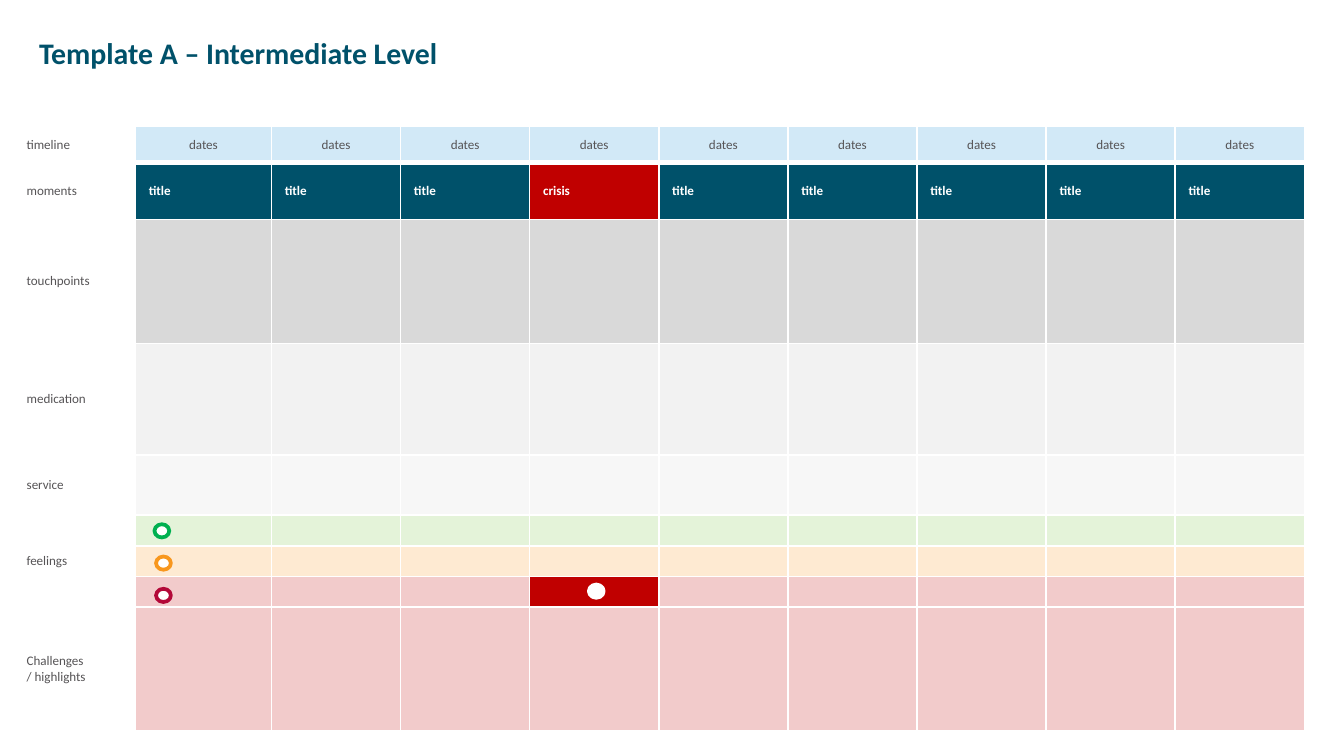
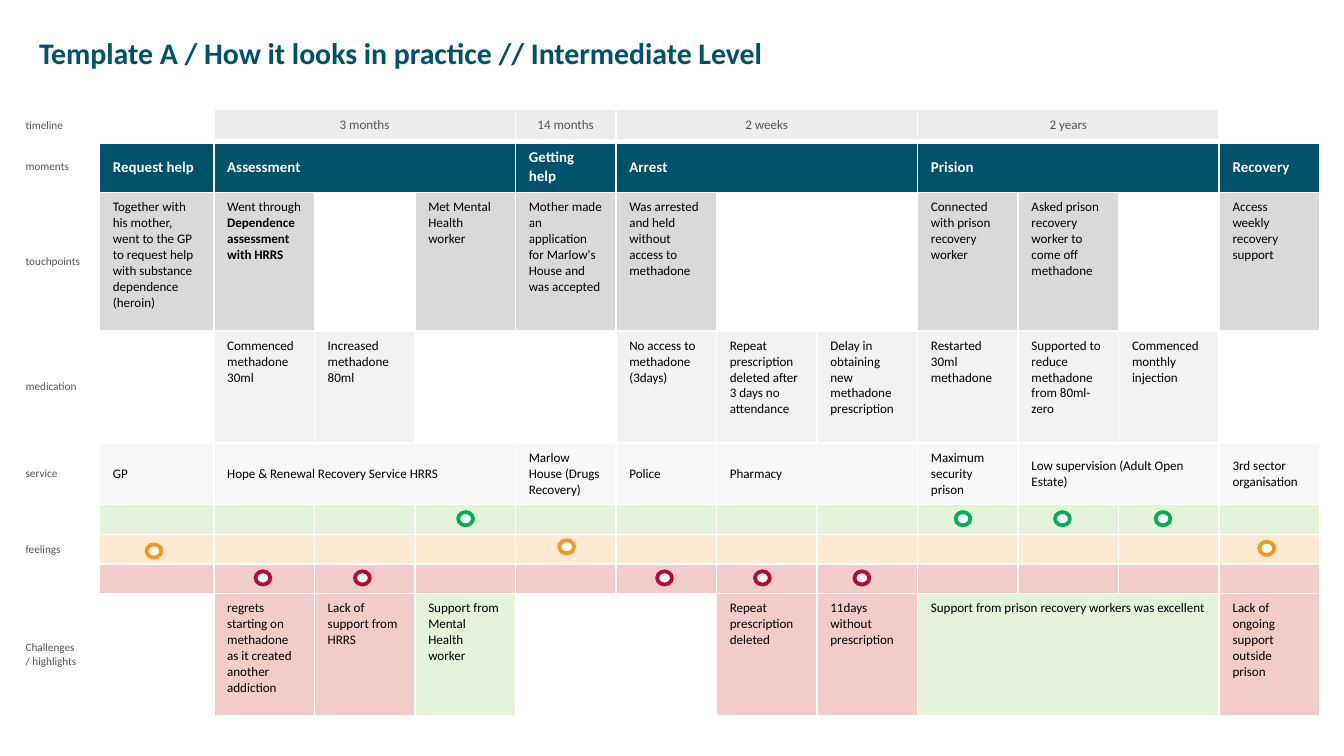
"""Build two patient journey slides: a blank intermediate template and a filled-in case."""
from lxml.etree import SubElement
from pptx import Presentation
from pptx.dml.color import RGBColor
from pptx.enum.shapes import MSO_SHAPE
from pptx.enum.text import MSO_ANCHOR, PP_ALIGN
from pptx.oxml.ns import qn
from pptx.util import Cm, Pt

FONT = "Calibri"
WHITE = RGBColor(0xFF, 0xFF, 0xFF)
BLACK = RGBColor(0x00, 0x00, 0x00)
SLATE = RGBColor(0x56, 0x54, 0x56)
TEAL = RGBColor(0x00, 0x51, 0x6A)
SKY = RGBColor(0xD2, 0xE9, 0xF7)
SILVER = RGBColor(0xED, 0xED, 0xED)
GREY = RGBColor(0xD9, 0xD9, 0xD9)
PALE_GREY = RGBColor(0xF2, 0xF2, 0xF2)
FAINT_GREY = RGBColor(0xF7, 0xF7, 0xF7)
MINT = RGBColor(0xE4, 0xF3, 0xD9)
PEACH = RGBColor(0xFE, 0xEA, 0xD2)
ROSE = RGBColor(0xF2, 0xCB, 0xCB)
CRISIS = RGBColor(0xC0, 0x00, 0x00)
GOOD = RGBColor(0x00, 0xB0, 0x50)
MIXED = RGBColor(0xF8, 0x97, 0x1D)
BAD = RGBColor(0xB3, 0x08, 0x38)

TIMELINE, MOMENTS, TOUCHPOINTS, MEDICATION, SERVICE, HAPPY, NEUTRAL, SAD, HIGHLIGHTS = range(9)
LABELS = {
    TIMELINE: "timeline", MOMENTS: "moments", TOUCHPOINTS: "touchpoints",
    MEDICATION: "medication", SERVICE: "service", HAPPY: "feelings",
    HIGHLIGHTS: "Challenges\n/ highlights",
}
ROW_FILLS = [SKY, TEAL, GREY, PALE_GREY, FAINT_GREY, MINT, PEACH, ROSE, ROSE]
TOP_ALIGNED = (TOUCHPOINTS, MEDICATION, HIGHLIGHTS)


def write(frame, text, size=7, color=BLACK, bold=False, align=None):
    """Fill a text frame; newlines split paragraphs and ** toggles bold."""
    for index, line in enumerate(text.split("\n")):
        paragraph = frame.add_paragraph() if index else frame.paragraphs[0]
        paragraph.alignment = align
        for part, words in enumerate(line.split("**")):
            if words:
                run = paragraph.add_run()
                run.text = words
                run.font.name = FONT
                run.font.size = Pt(size)
                run.font.bold = bold or part % 2 == 1
                run.font.color.rgb = color


template_entries = {row: [(column, 1, "") for column in range(1, 10)] for row in range(9)}
template_entries[TIMELINE] = [(column, 1, "dates") for column in range(1, 10)]
template_entries[MOMENTS] = [(column, 1, "title") for column in range(1, 10)]
template_entries[MOMENTS][3] = (4, 1, "crisis", CRISIS)
template_entries[SAD][3] = (4, 1, "", CRISIS)

practice_entries = {row: [(column, 1, "") for column in range(1, 13)]
                    for row in (HAPPY, NEUTRAL, SAD)}
practice_entries[TIMELINE] = [
    (2, 3, "3 months", SILVER),
    (5, 1, "14 months", SILVER),
    (6, 3, "2 weeks", SILVER),
    (9, 3, "2 years", SILVER),
]
practice_entries[MOMENTS] = [
    (1, 1, "Request help"),
    (2, 3, "Assessment"),
    (5, 1, "Getting help"),
    (6, 3, "Arrest"),
    (9, 3, "Prision"),
    (12, 1, "Recovery"),
]
practice_entries[TOUCHPOINTS] = [
    (1, 1, "Together with his mother, went to the GP to request help with substance dependence (heroin)"),
    (2, 1, "Went through **Dependence assessment with HRRS"),
    (4, 1, "Met Mental Health worker"),
    (5, 1, "Mother made an application for Marlow's House and was accepted"),
    (6, 1, "Was arrested and held without access to methadone"),
    (9, 1, "Connected with prison recovery worker"),
    (10, 1, "Asked prison recovery worker to come off methadone"),
    (12, 1, "Access weekly recovery support"),
]
practice_entries[MEDICATION] = [
    (2, 1, "Commenced methadone 30ml"),
    (3, 1, "Increased methadone 80ml"),
    (6, 1, "No access to methadone (3days)"),
    (7, 1, "Repeat prescription deleted after 3 days no\nattendance"),
    (8, 1, "Delay in obtaining new methadone prescription"),
    (9, 1, "Restarted 30ml methadone"),
    (10, 1, "Supported to reduce methadone from 80ml-zero"),
    (11, 1, "Commenced monthly injection"),
]
practice_entries[SERVICE] = [
    (1, 1, "GP"),
    (2, 3, "Hope & Renewal Recovery Service HRRS"),
    (5, 1, "Marlow House (Drugs Recovery)"),
    (6, 1, "Police"),
    (7, 2, "Pharmacy"),
    (9, 1, "Maximum security prison"),
    (10, 2, "Low supervision (Adult Open Estate)"),
    (12, 1, "3rd sector organisation"),
]
practice_entries[HIGHLIGHTS] = [
    (2, 1, "regrets starting on methadone as it created another addiction"),
    (3, 1, "Lack of support from HRRS"),
    (4, 1, "Support from Mental Health worker", MINT),
    (7, 1, "Repeat\nprescription\ndeleted"),
    (8, 1, "11days without prescription"),
    (9, 3, "Support from prison recovery workers was excellent", MINT),
    (12, 1, "Lack of ongoing support outside prison"),
]

journeys = [
    {
        "title": "Template A – Intermediate Level",
        "corner": (0.25, 2.39),
        "widths": [2.31, 2.57] + [2.44] * 8,
        "heights": [0.69, 1.07, 2.34, 2.11, 1.14, 0.58, 0.58, 0.58, 2.34],
        "label_size": 7,
        "moment_size": 7,
        "entries": template_entries,
        "feelings": [(GOOD, 2.92, 9.91), (MIXED, 2.95, 10.52),
                     (BAD, 2.95, 11.13), (WHITE, 11.13, 11.05)],
    },
    {
        "title": "Template A / How it looks in practice // Intermediate Level",
        "corner": (0.23, 2.06),
        "widths": [1.65, 2.16] + [1.9] * 11,
        "heights": [0.61, 0.97, 2.62, 2.11, 1.17, 0.56, 0.56, 0.56, 2.31],
        "label_size": 6,
        "moment_size": 8,
        "entries": practice_entries,
        "feelings": [(GOOD, left, 9.68) for left in (8.66, 18.06, 19.94, 21.84)]
        + [(MIXED, 2.77, 10.29), (MIXED, 10.57, 10.21), (MIXED, 23.8, 10.24)]
        + [(BAD, left, 10.8) for left in (4.83, 6.71, 12.42, 14.27, 16.15)],
    },
]

deck = Presentation()
deck.slide_width, deck.slide_height = Cm(25.4), Cm(14.29)

for journey in journeys:
    slide = deck.slides.add_slide(deck.slide_layouts[6])
    widths, heights = journey["widths"], journey["heights"]
    left, top = journey["corner"]
    grid = slide.shapes.add_table(len(heights), len(widths), Cm(left), Cm(top),
                                  Cm(sum(widths)), Cm(sum(heights))).table
    grid.first_row = grid.horz_banding = False
    for column, width in zip(grid.columns, widths):
        column.width = Cm(width)
    for row, height in zip(grid.rows, heights):
        row.height = Cm(height)

    for row in range(len(heights)):
        for column in range(len(widths)):
            cell = grid.cell(row, column)
            properties = cell._tc.get_or_add_tcPr()
            for side in ("lnL", "lnR", "lnT", "lnB"):
                thick = row == TIMELINE and side == "lnB"
                border = SubElement(properties, qn(f"a:{side}"), w=str(Pt(3 if thick else 1)))
                SubElement(SubElement(border, qn("a:solidFill")), qn("a:srgbClr"), val=str(WHITE))
            cell.fill.solid()
            cell.fill.fore_color.rgb = WHITE
            cell.vertical_anchor = MSO_ANCHOR.MIDDLE
            SubElement(cell.text_frame.paragraphs[0]._p, qn("a:endParaRPr"), sz="600")

    for row, label in LABELS.items():
        write(grid.cell(row, 0).text_frame, label, size=journey["label_size"], color=SLATE)
    grid.cell(HAPPY, 0).merge(grid.cell(SAD, 0))

    for row, entries in journey["entries"].items():
        style = {}
        if row == TIMELINE:
            style = {"color": SLATE, "align": PP_ALIGN.CENTER}
        elif row == MOMENTS:
            style = {"color": WHITE, "bold": True, "size": journey["moment_size"]}
        for column, span, text, *special_fill in entries:
            cell = grid.cell(row, column)
            if span > 1:
                cell.merge(grid.cell(row, column + span - 1))
            cell.fill.solid()
            cell.fill.fore_color.rgb = special_fill[0] if special_fill else ROW_FILLS[row]
            if row in TOP_ALIGNED:
                cell.vertical_anchor = MSO_ANCHOR.TOP
            write(cell.text_frame, text, **style)

    for color, left, top in journey["feelings"]:
        feeling = slide.shapes.add_shape(MSO_SHAPE.OVAL, Cm(left), Cm(top), Cm(0.28), Cm(0.25))
        feeling.shadow.inherit = False
        feeling.fill.solid()
        feeling.fill.fore_color.rgb = WHITE
        feeling.line.color.rgb = color
        feeling.line.width = Pt(2)

    heading = slide.shapes.add_textbox(Cm(0.74), Cm(0.48), Cm(21.79), Cm(1.04)).text_frame
    heading.word_wrap = True
    heading.vertical_anchor = MSO_ANCHOR.MIDDLE
    heading.margin_left = heading.margin_right = heading.margin_top = heading.margin_bottom = 0
    write(heading, journey["title"], size=16, color=TEAL, bold=True)

deck.save("out.pptx")
